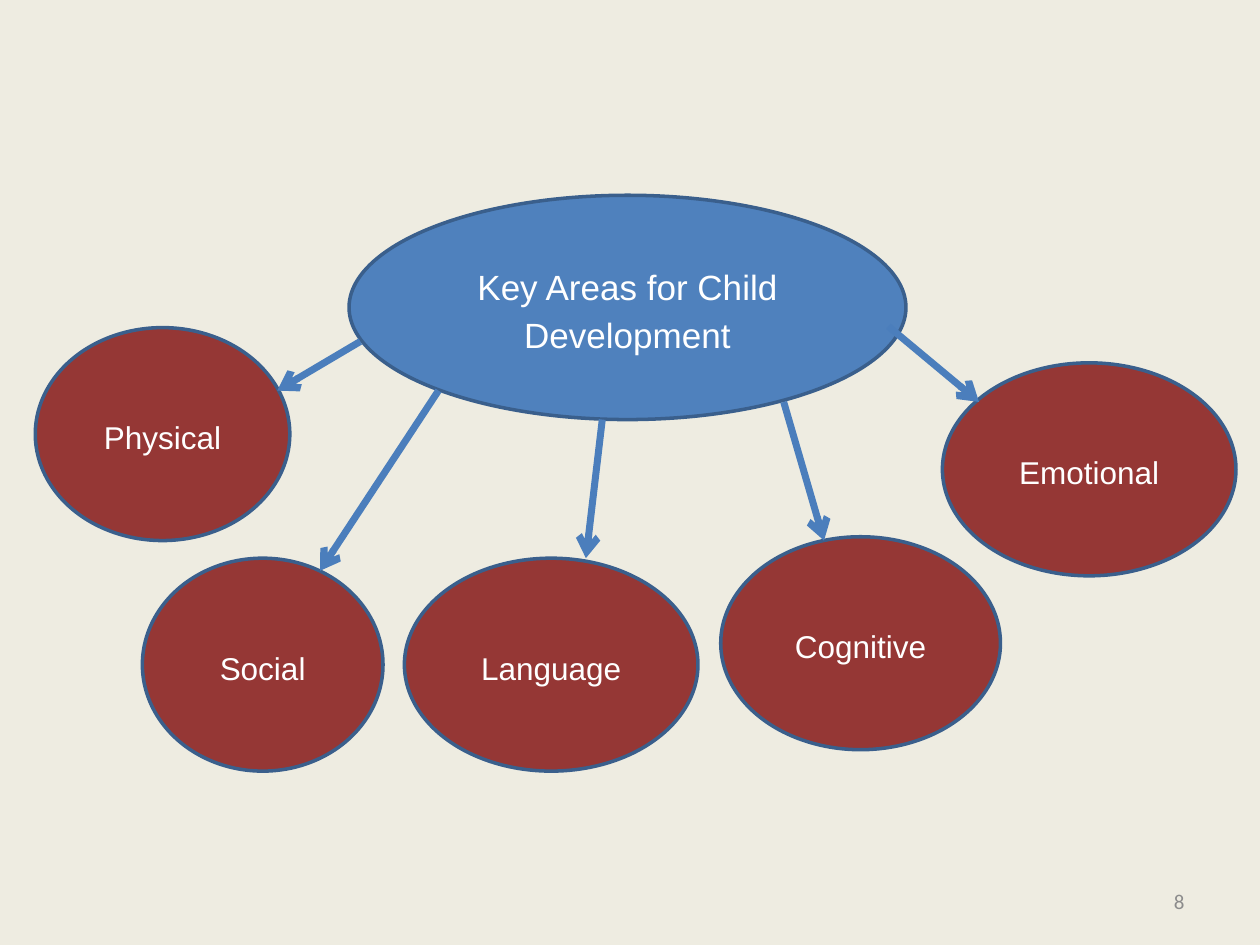
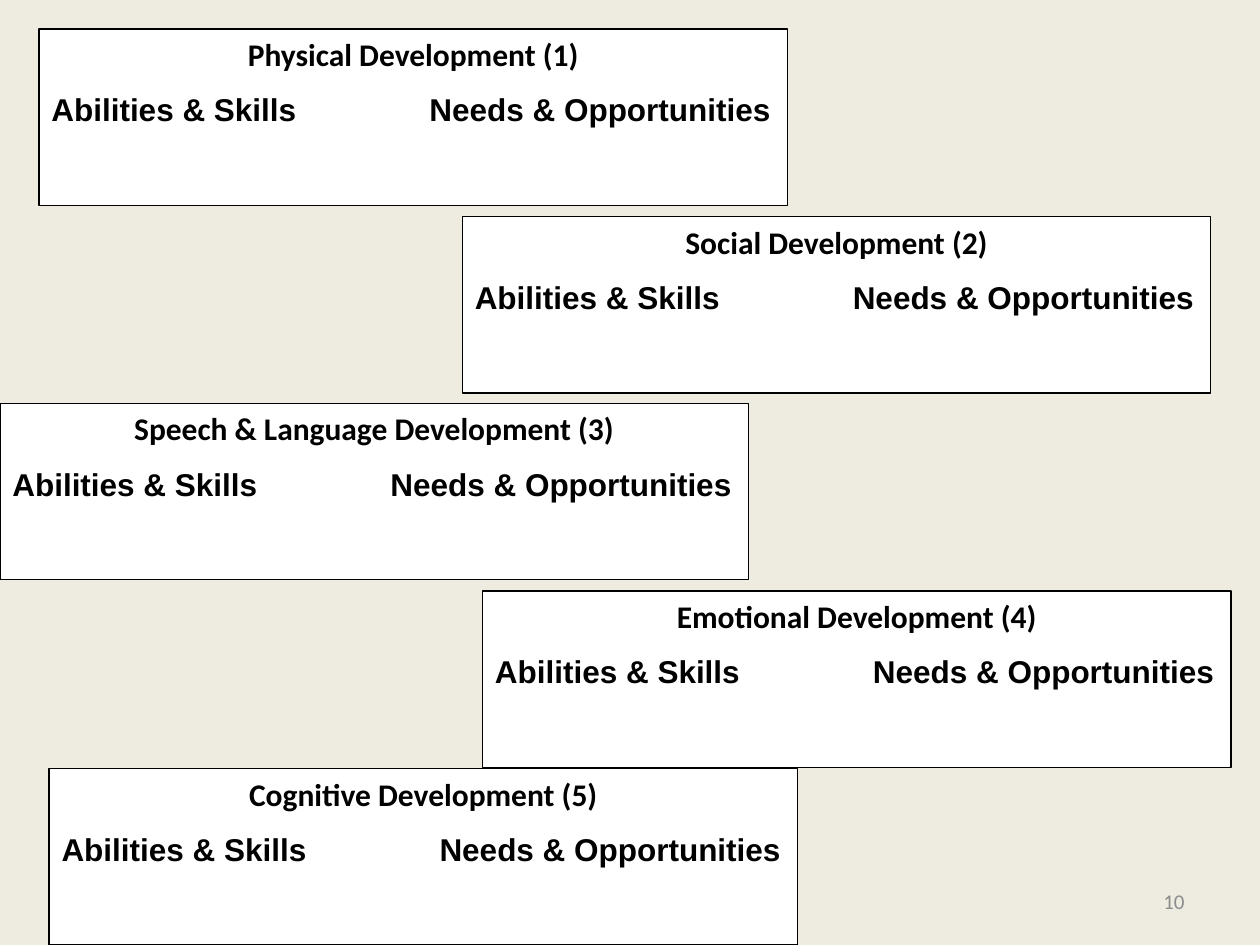
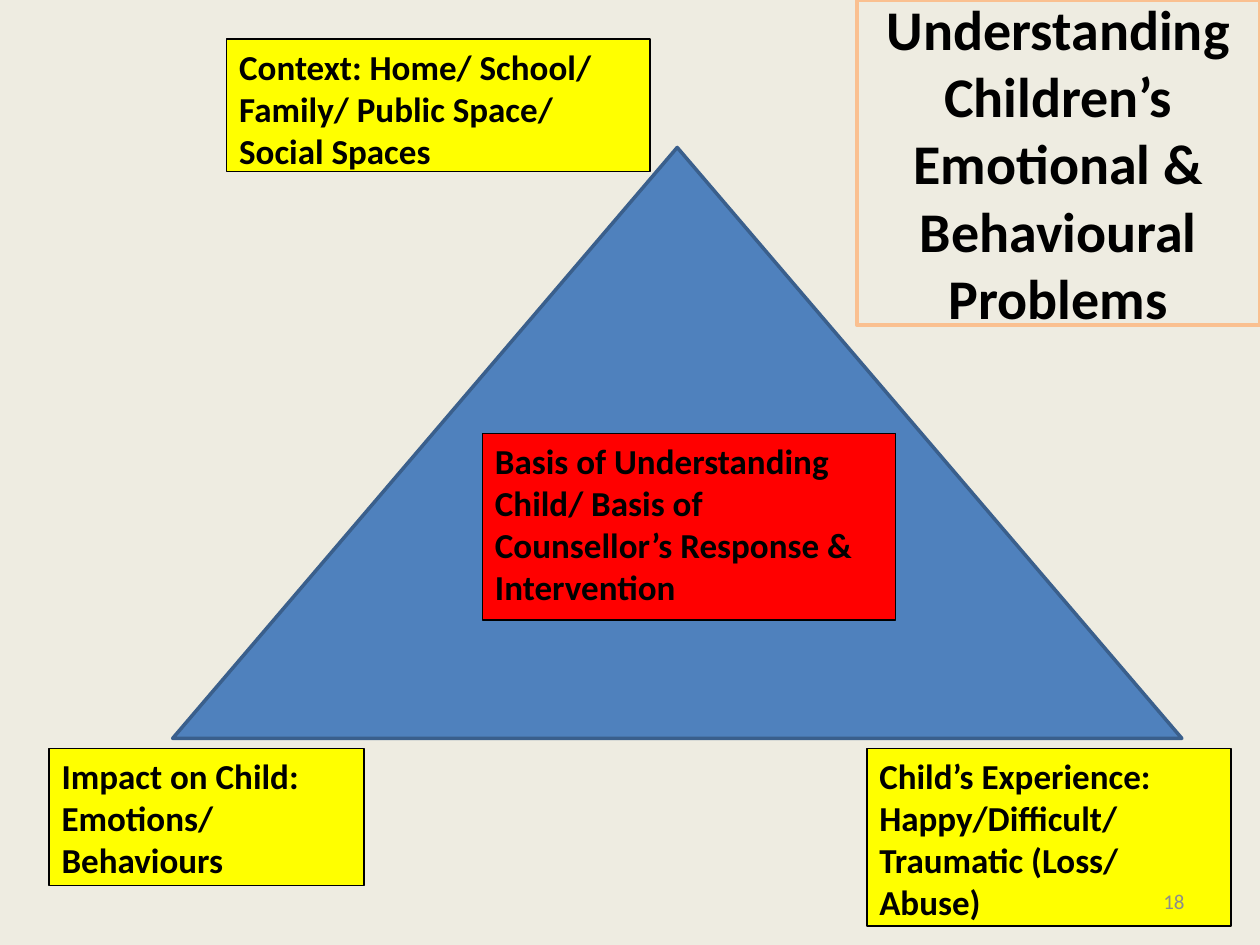
"""Build three slides on the key areas of child development."""

from lxml.etree import SubElement
from pptx import Presentation
from pptx.dml.color import RGBColor
from pptx.enum.shapes import MSO_CONNECTOR, MSO_SHAPE
from pptx.enum.text import MSO_ANCHOR, PP_ALIGN
from pptx.oxml.ns import qn
from pptx.util import Inches, Pt

COLORS = {
    "background": "EEECE1",
    "blue": "4F81BD",
    "blue_edge": "3A5F8C",
    "arrow": "4B7EBC",
    "maroon": "953735",
    "yellow": "FFFF00",
    "red": "FF0000",
    "peach": "FAC090",
    "white": "FFFFFF",
    "black": "000000",
    "grey": "8C8C8C",
}

HUB = ("Key Areas for Child Development", (2.77, 1.55, 4.42, 1.78))
AREA_HEIGHT = 1.69
AREAS = [
    ("Social", 1.13, 4.43, 1.91),
    ("Language", 3.21, 4.43, 2.33),
    ("Cognitive", 5.72, 4.26, 2.22),
    ("Physical", 0.28, 2.6, 2.02),
    ("Emotional", 7.48, 2.88, 2.33),
]
ARROWS = [
    ((2.86, 2.71), (2.2, 3.1)),
    ((3.48, 3.1), (2.54, 4.53)),
    ((4.78, 3.33), (4.65, 4.43)),
    ((6.22, 3.19), (6.54, 4.29)),
    ((7.05, 2.59), (7.77, 3.19)),
]

CARD_SIZE = (5.94, 1.4)
CARD_TAB = 3
CARD_COLUMNS = "Abilities & Skills\tNeeds & Opportunities"
CARDS = [
    ("Physical", 0.31, 0.23),
    ("Social", 3.67, 1.72),
    ("Speech & Language", 0, 3.2),
    ("Emotional", 3.83, 4.69),
    ("Cognitive", 0.39, 6.1),
]

TRIANGLE = (1.37, 1.17, 8.01, 4.69)
LABELS = [
    ("Context: Home/ School/ Family/ Public Space/ Social Spaces",
     (1.8, 0.31, 3.36, 1.05), "yellow"),
    ("Child’s Experience: Happy/Difficult/ Traumatic (Loss/ Abuse)",
     (6.88, 5.94, 2.89, 1.41), "yellow"),
    ("Impact on Child: Emotions/ Behaviours",
     (0.39, 5.94, 2.5, 1.09), "yellow"),
    ("Basis of Understanding Child/ Basis of Counsellor’s Response & Intervention",
     (3.83, 3.44, 3.28, 1.48), "red"),
]
TITLE = ("Understanding Children’s Emotional & Behavioural Problems",
         (6.8, 0, 3.2, 2.58))
PAGE_NUMBER_BOX = (7.17, 6.95, 2.33, 0.4)


def color(name):
    return RGBColor.from_string(COLORS[name])


def add_box(slide, kind, box, fill, edge, width, anchor=MSO_ANCHOR.TOP):
    shape = slide.shapes.add_shape(kind, *map(Inches, box))
    shape.shadow.inherit = False
    if fill:
        shape.fill.solid()
        shape.fill.fore_color.rgb = color(fill)
    else:
        shape.fill.background()
    shape.line.color.rgb = color(edge)
    shape.line.width = Pt(width)
    shape.text_frame.word_wrap = True
    shape.text_frame.vertical_anchor = anchor
    return shape


def write(paragraph, text, size, font="Calibri", tint="black", bold=False,
          align=PP_ALIGN.LEFT, after=10, spacing=None):
    paragraph.alignment = align
    paragraph.space_after = Pt(after)
    paragraph.line_spacing = spacing
    run = paragraph.add_run()
    run.text = text
    run.font.size = Pt(size)
    run.font.name = font
    run.font.bold = bold
    run.font.color.rgb = color(tint)


def add_ellipse(slide, text, box, fill, size):
    ellipse = add_box(slide, MSO_SHAPE.OVAL, box, fill, "blue_edge", 2, MSO_ANCHOR.MIDDLE)
    write(ellipse.text_frame.paragraphs[0], text, size, "Arial", "white",
          align=PP_ALIGN.CENTER, spacing=1.15)


def add_arrow(slide, start, end):
    arrow = slide.shapes.add_connector(MSO_CONNECTOR.STRAIGHT, *map(Inches, start + end))
    arrow.line.color.rgb = color("arrow")
    arrow.line.width = Pt(4)
    SubElement(arrow.line._get_or_add_ln(), qn("a:tailEnd"), type="arrow")
    SubElement(arrow._element.spPr, qn("a:effectLst"))


def add_card(slide, area, number, left, top):
    card = add_box(slide, MSO_SHAPE.RECTANGLE, (left, top, *CARD_SIZE), "white", "black", 0.75)
    heading = card.text_frame.paragraphs[0]
    write(heading, f"{area} Development ({number})", 18, bold=True, align=PP_ALIGN.CENTER)
    columns = card.text_frame.add_paragraph()
    write(columns, CARD_COLUMNS, 18, "Arial", bold=True)
    tabs = SubElement(columns._p.get_or_add_pPr(), qn("a:tabLst"))
    SubElement(tabs, qn("a:tab"), pos=str(Inches(CARD_TAB)), algn="l")


def add_page_number(slide, number):
    frame = slide.shapes.add_textbox(*map(Inches, PAGE_NUMBER_BOX)).text_frame
    frame.word_wrap = True
    frame.vertical_anchor = MSO_ANCHOR.MIDDLE
    write(frame.paragraphs[0], str(number), 12, tint="grey", align=PP_ALIGN.RIGHT, after=0)


def draw_areas(slide):
    add_ellipse(slide, *HUB, "blue", 20)
    for name, left, top, width in AREAS:
        add_ellipse(slide, name, (left, top, width, AREA_HEIGHT), "maroon", 18)
    for start, end in ARROWS:
        add_arrow(slide, start, end)


def draw_cards(slide):
    for number, (area, left, top) in enumerate(CARDS, 1):
        add_card(slide, area, number, left, top)


def draw_triangle(slide):
    add_box(slide, MSO_SHAPE.ISOSCELES_TRIANGLE, TRIANGLE, "blue", "blue_edge", 2)
    for text, box, fill in LABELS:
        label = add_box(slide, MSO_SHAPE.RECTANGLE, box, fill, "black", 0.75)
        write(label.text_frame.paragraphs[0], text, 20, bold=True)
    text, box = TITLE
    title = add_box(slide, MSO_SHAPE.RECTANGLE, box, None, "peach", 2, MSO_ANCHOR.MIDDLE)
    write(title.text_frame.paragraphs[0], text, 32, bold=True,
          align=PP_ALIGN.CENTER, after=0)


def main():
    presentation = Presentation()
    presentation.slide_width, presentation.slide_height = Inches(10), Inches(7.5)
    background = presentation.slide_master.background.fill
    background.solid()
    background.fore_color.rgb = color("background")
    for draw, number in [(draw_areas, 8), (draw_cards, 10), (draw_triangle, 18)]:
        slide = presentation.slides.add_slide(presentation.slide_layouts[6])
        draw(slide)
        add_page_number(slide, number)
    presentation.save("out.pptx")


if __name__ == "__main__":
    main()
